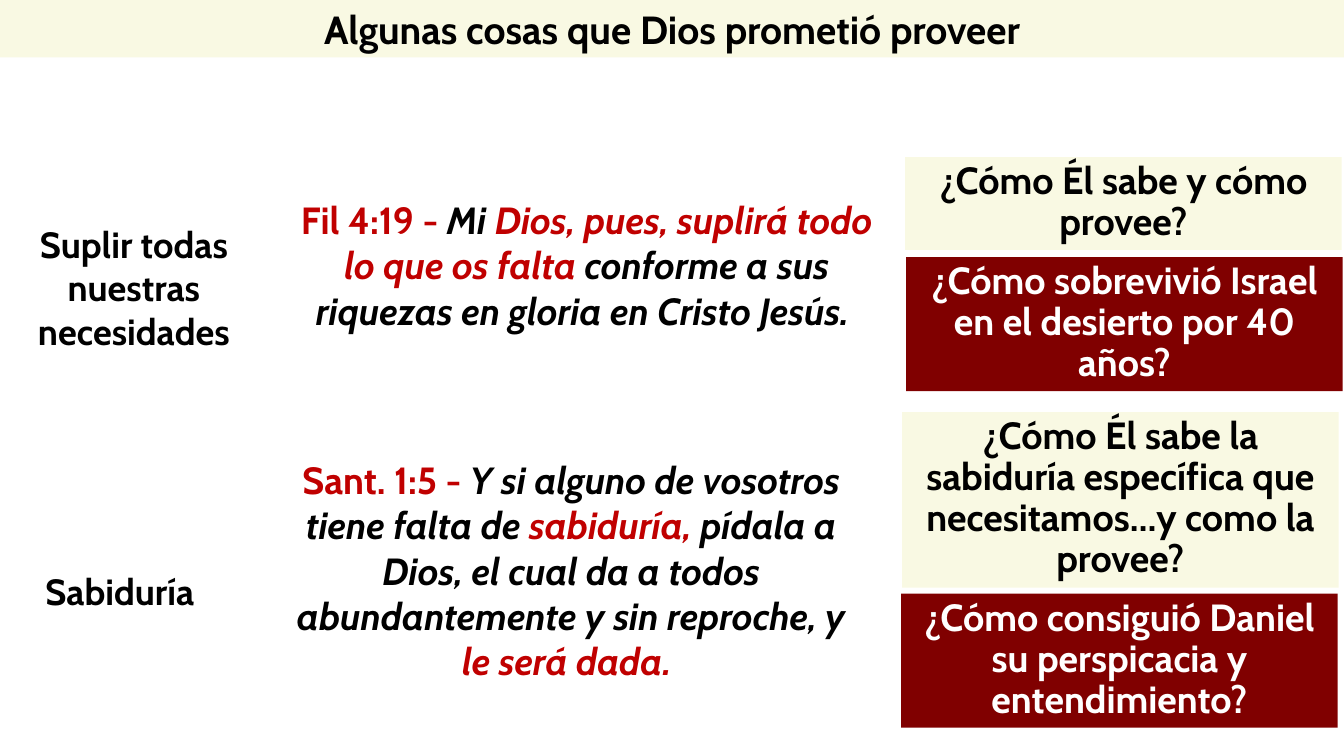
import pptx
import pptx.dml.color
import pptx.enum.shapes
import pptx.enum.text
import pptx.util
from dataclasses import dataclass
from typing import Optional

COLORS = {"black": "000000", "white": "FFFFFF", "red": "C00000",
          "cream": "F9F9E3", "maroon": "800000"}
FONT = "Cabin"

# The slide is a grid of 160 columns and 90 rows
COLUMNS, ROWS = 160, 90
WIDTH, HEIGHT = pptx.util.Inches(13.33), pptx.util.Inches(7.5)
QUESTION_COLUMNS = 51.96


@dataclass
class Piece:
    text: str
    color: str = "black"
    italic: bool = False


@dataclass
class Block:
    column: float
    row: float
    columns: float
    rows: float
    pieces: list[Piece]
    size: float = 27
    spacing: float = 1.0
    fill: Optional[str] = None


def question(column: float, row: float, rows: float, text: str,
             fill: str = "cream", color: str = "black") -> Block:
    return Block(column, row, QUESTION_COLUMNS, rows, [Piece(text, color)],
                 spacing=0.9, fill=fill)


TITLE = Block(0, 0, COLUMNS, 6.84,
              [Piece("Algunas cosas que Dios prometió proveer")],
              size=28, fill="cream")

BLOCKS = [
    # Promises
    Block(0.96, 25.8, 30, 16.92,
          [Piece("Suplir todas nuestras necesidades")], size=26),
    Block(0.96, 67.8, 26.64, 5.88, [Piece("Sabiduría")], size=26, spacing=0.9),
    # Verses
    Block(34.56, 22.8, 70.56, 23.04, [
        Piece("Fil 4:19 - ", "red"),
        Piece("Mi ", italic=True),
        Piece("Dios, pues, suplirá todo lo que os falta ", "red", True),
        Piece("conforme a sus riquezas en gloria en Cristo Jesús. ", italic=True),
    ]),
    Block(33.96, 53.76, 68.04, 33.96, [
        Piece("Sant. 1:5 - ", "red"),
        Piece("Y si alguno de vosotros tiene falta de ", italic=True),
        Piece("sabiduría, ", "red", True),
        Piece("pídala a Dios, el cual da a todos abundantemente "
              "y sin reproche, y ", italic=True),
        Piece("le será dada. ", "red", True),
    ]),
    # Questions
    question(107.76, 18.72, 11.04, "¿Cómo Él sabe y cómo provee?"),
    question(107.88, 30.6, 15.96,
             "¿Cómo sobrevivió Israel en el desierto por 40 años?",
             "maroon", "white"),
    question(107.4, 49.08, 20.88,
             "¿Cómo Él sabe la sabiduría específica que necesitamos…"
             "y como la provee?"),
    question(107.28, 70.68, 15.96,
             "¿Cómo consiguió Daniel su perspicacia y entendimiento?",
             "maroon", "white"),
]


def rgb(name: str) -> pptx.dml.color.RGBColor:
    return pptx.dml.color.RGBColor.from_string(COLORS[name])


def frame(block: Block) -> tuple[int, int, int, int]:
    return (round(WIDTH * block.column / COLUMNS),
            round(HEIGHT * block.row / ROWS),
            round(WIDTH * block.columns / COLUMNS),
            round(HEIGHT * block.rows / ROWS))


def format_block(shape, block: Block) -> None:
    if block.fill:
        shape.fill.solid()
        shape.fill.fore_color.rgb = rgb(block.fill)
        shape.line.fill.background()
    text_frame = shape.text_frame
    text_frame.word_wrap = True
    text_frame.auto_size = pptx.enum.text.MSO_AUTO_SIZE.NONE
    text_frame.vertical_anchor = pptx.enum.text.MSO_ANCHOR.TOP
    paragraph = text_frame.paragraphs[0]
    paragraph.alignment = pptx.enum.text.PP_ALIGN.CENTER
    paragraph.line_spacing = block.spacing
    paragraph.font.name = FONT
    paragraph.font.size = pptx.util.Pt(block.size)
    paragraph.font.bold = True
    for piece in block.pieces:
        run = paragraph.add_run()
        run.text = piece.text
        run.font.italic = piece.italic
        run.font.color.rgb = rgb(piece.color)


def add_block(slide, block: Block) -> None:
    if block.fill:
        shape = slide.shapes.add_shape(
            pptx.enum.shapes.MSO_SHAPE.RECTANGLE, *frame(block))
        shape.shadow.inherit = False
    else:
        shape = slide.shapes.add_textbox(*frame(block))
    format_block(shape, block)


def main() -> None:
    presentation = pptx.Presentation()
    presentation.slide_width, presentation.slide_height = WIDTH, HEIGHT
    slide = presentation.slides.add_slide(presentation.slide_layouts[5])

    # Title band
    title = slide.shapes.title
    title.left, title.top, title.width, title.height = frame(TITLE)
    format_block(title, TITLE)

    # Promises, verses and questions
    for block in BLOCKS:
        add_block(slide, block)

    presentation.save("out.pptx")


if __name__ == "__main__":
    main()
